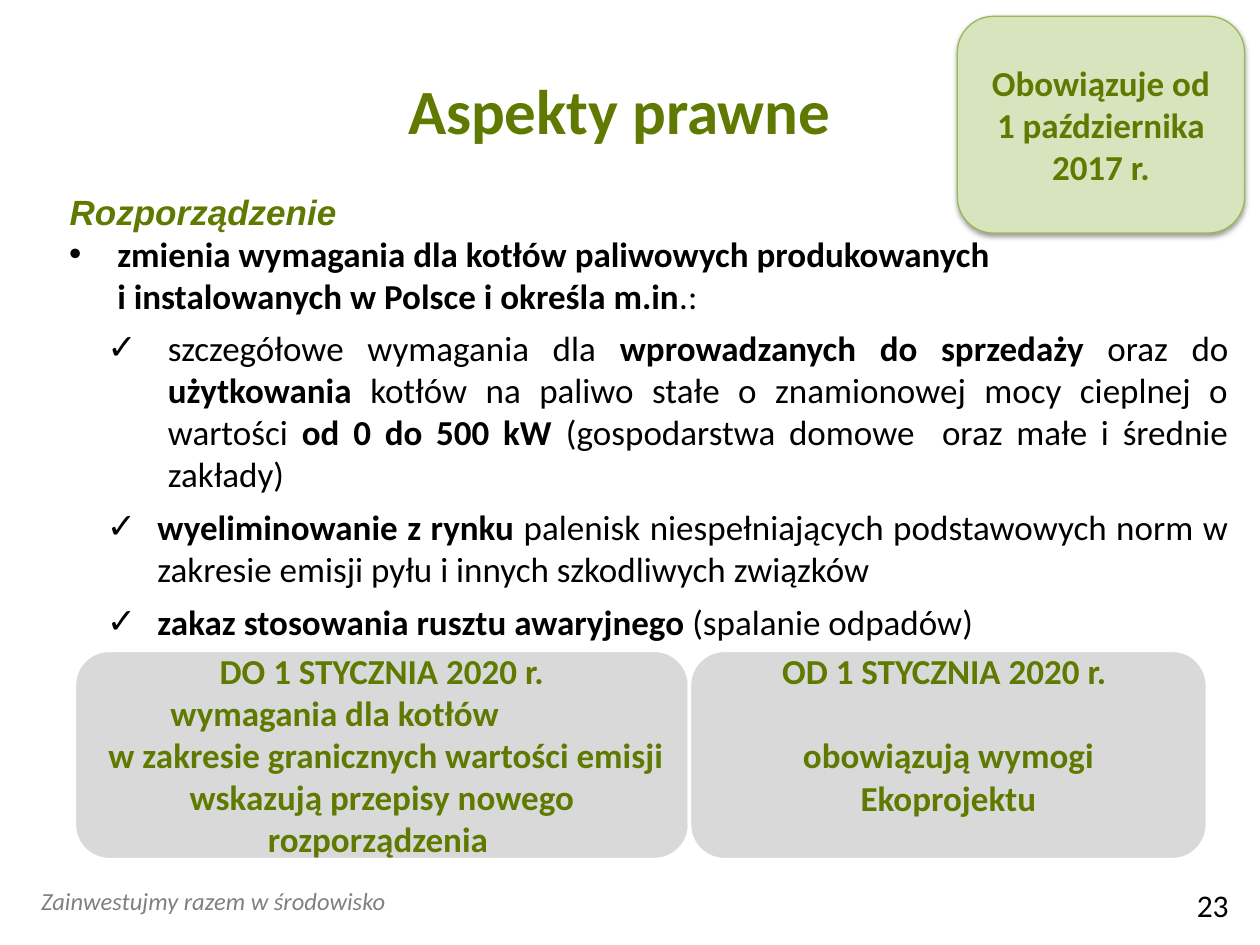
from lxml import etree
from pptx import Presentation
from pptx.dml.color import RGBColor
from pptx.enum.shapes import MSO_SHAPE
from pptx.enum.text import MSO_ANCHOR, MSO_AUTO_SIZE, PP_ALIGN
from pptx.oxml.ns import qn
from pptx.util import Cm, Pt

LEFT, CENTER, RIGHT, JUSTIFY = PP_ALIGN.LEFT, PP_ALIGN.CENTER, PP_ALIGN.RIGHT, PP_ALIGN.JUSTIFY
TOP, MIDDLE = MSO_ANCHOR.TOP, MSO_ANCHOR.MIDDLE
NO_FIT = MSO_AUTO_SIZE.NONE
ROUNDED = MSO_SHAPE.ROUNDED_RECTANGLE

COLORS = {
    "green": "5F7901", "black": "000000", "footer": "808080", "white": "FFFFFF",
    "panel": "D9D9D9", "badge": "D7E4BD", "badge_line": "98B955",
}

TITLE = "Aspekty prawne"
HEADING = "Rozporządzenie"
POINTS = [
    ("•", LEFT, 0, 1.7, 0.97, [
        ("zmienia wymagania dla kotłów paliwowych produkowanych \n"
         "i instalowanych w Polsce i określa m.in", True),
        (".:", False)]),
    ("✓", JUSTIFY, 6, 2.72, 1.22, [
        ("szczegółowe wymagania dla ", False),
        ("wprowadzanych do sprzedaży ", True),
        ("oraz do ", False),
        ("użytkowania ", True),
        ("kotłów na paliwo stałe o znamionowej mocy cieplnej o wartości ", False),
        ("od 0 do 500 kW ", True),
        ("(gospodarstwa domowe  oraz małe i średnie zakłady)", False)]),
    ("✓", JUSTIFY, 6, 2.51, 1.02, [
        ("wyeliminowanie z rynku ", True),
        ("palenisk niespełniających podstawowych norm w zakresie emisji pyłu "
         "i innych szkodliwych związków", False)]),
    ("✓", JUSTIFY, 6, 2.51, 1.02, [
        ("zakaz stosowania rusztu awaryjnego ", True),
        ("(spalanie odpadów)", False)]),
]
PANEL_LEFT, PANEL_TOP, PANEL_HEIGHT = 1.5, 13.11, 4.22
PANELS = [
    (12.4, 0.13, [
        ("DO 1 STYCZNIA 2020 r.", 0, 0),
        ("wymagania dla kotłów", 0, 1.9),
        (" w zakresie granicznych wartości emisji wskazują przepisy nowego rozporządzenia ", 0, 0)]),
    (10.44, 0.97, [
        ("OD 1 STYCZNIA 2020 r. ", 0, 0),
        ("obowiązują wymogi Ekoprojektu", 24, 0)]),
]
BADGE = "Obowiązuje od 1 października 2017 r."
LABELS = [
    ("Zainwestujmy razem w środowisko", (0.58, 17.73, 10.72, 0.86), LEFT, 14, "footer", True),
    ("23", (19.1, 17.73, 5.92, 1.02), RIGHT, 18, "black", False),
]


def rgb(name):
    return RGBColor.from_string(COLORS[name])


def place(shape, left, top, width, height):
    shape.left, shape.top, shape.width, shape.height = Cm(left), Cm(top), Cm(width), Cm(height)


def prepare(shape, anchor):
    frame = shape.text_frame
    frame.word_wrap = True
    frame.auto_size = NO_FIT
    frame.vertical_anchor = anchor
    return frame


def next_para(frame, index, align, before=0):
    para = frame.paragraphs[0] if index == 0 else frame.add_paragraph()
    para.alignment = align
    para.space_before = Pt(before)
    return para


def add_text(para, text, size=20, color="green", bold=False, italic=False, font="Calibri"):
    for number, line in enumerate(text.split("\n")):
        if number:
            para.add_line_break()
        span = para.add_run()
        span.text = line
        span.font.name = font
        span.font.size = Pt(size)
        span.font.bold = bold
        span.font.italic = italic
        span.font.color.rgb = rgb(color)


def set_bullet(para, margin, hanging, char=None):
    props = para._p.get_or_add_pPr()
    props.set("marL", str(Cm(margin)))
    props.set("indent", str(-Cm(hanging)))
    if char is None:
        etree.SubElement(props, qn("a:buNone"))
        return
    etree.SubElement(props, qn("a:buFont"), typeface="Arial")
    etree.SubElement(props, qn("a:buChar"), char=char)


def add_rounded(page, spot, fill, line, line_width):
    box = page.shapes.add_shape(ROUNDED, *[Cm(value) for value in spot])
    box.shadow.inherit = False
    box.fill.solid()
    box.fill.fore_color.rgb = rgb(fill)
    box.line.color.rgb = rgb(line)
    box.line.width = Pt(line_width)
    return box


def add_shadow(box):
    effects = box._element.spPr.find(qn("a:effectLst"))
    shadow = etree.SubElement(effects, qn("a:outerShdw"), blurRad=str(Pt(3.1)),
                              dist=str(Pt(1.6)), dir="5400000", rotWithShape="0")
    color = etree.SubElement(shadow, qn("a:srgbClr"), val=COLORS["black"])
    etree.SubElement(color, qn("a:alpha"), val="38000")


def main():
    deck = Presentation()
    deck.slide_width, deck.slide_height = Cm(25.4), Cm(19.05)
    page = deck.slides.add_slide(deck.slide_layouts[1])

    title = page.shapes.title
    place(title, 0.89, 0.71, 23.19, 2.97)
    para = next_para(prepare(title, MIDDLE), 0, CENTER)
    add_text(para, TITLE, size=36, bold=True)

    body = page.placeholders[1]
    place(body, 0.41, 3.71, 24.61, 9.45)
    frame = prepare(body, TOP)
    para = next_para(frame, 0, LEFT)
    set_bullet(para, 0.74, 0)
    add_text(para, HEADING, bold=True, italic=True, font="Arial")
    for index, (char, align, before, margin, hanging, spans) in enumerate(POINTS, 1):
        para = next_para(frame, index, align, before)
        set_bullet(para, margin, hanging, char)
        for text, bold in spans:
            add_text(para, text, color="black", bold=bold)

    left = PANEL_LEFT
    for width, bottom_inset, lines in PANELS:
        panel = add_rounded(page, (left, PANEL_TOP, width, PANEL_HEIGHT), "panel", "white", 2)
        frame = prepare(panel, MIDDLE)
        frame.margin_bottom = Cm(bottom_inset)
        for index, (text, before, right_indent) in enumerate(lines):
            para = next_para(frame, index, CENTER, before)
            para._p.get_or_add_pPr().set("marR", str(Cm(right_indent)))
            add_text(para, text, bold=True)
        left += width

    badge = add_rounded(page, (19.3, 0.33, 5.79, 4.37), "badge", "badge_line", 0.75)
    add_shadow(badge)
    add_text(next_para(prepare(badge, MIDDLE), 0, CENTER), BADGE, bold=True)

    for text, spot, align, size, color, italic in LABELS:
        label = page.shapes.add_textbox(*[Cm(value) for value in spot])
        para = next_para(prepare(label, TOP), 0, align)
        add_text(para, text, size=size, color=color, italic=italic)

    deck.save("out.pptx")


if __name__ == "__main__":
    main()
